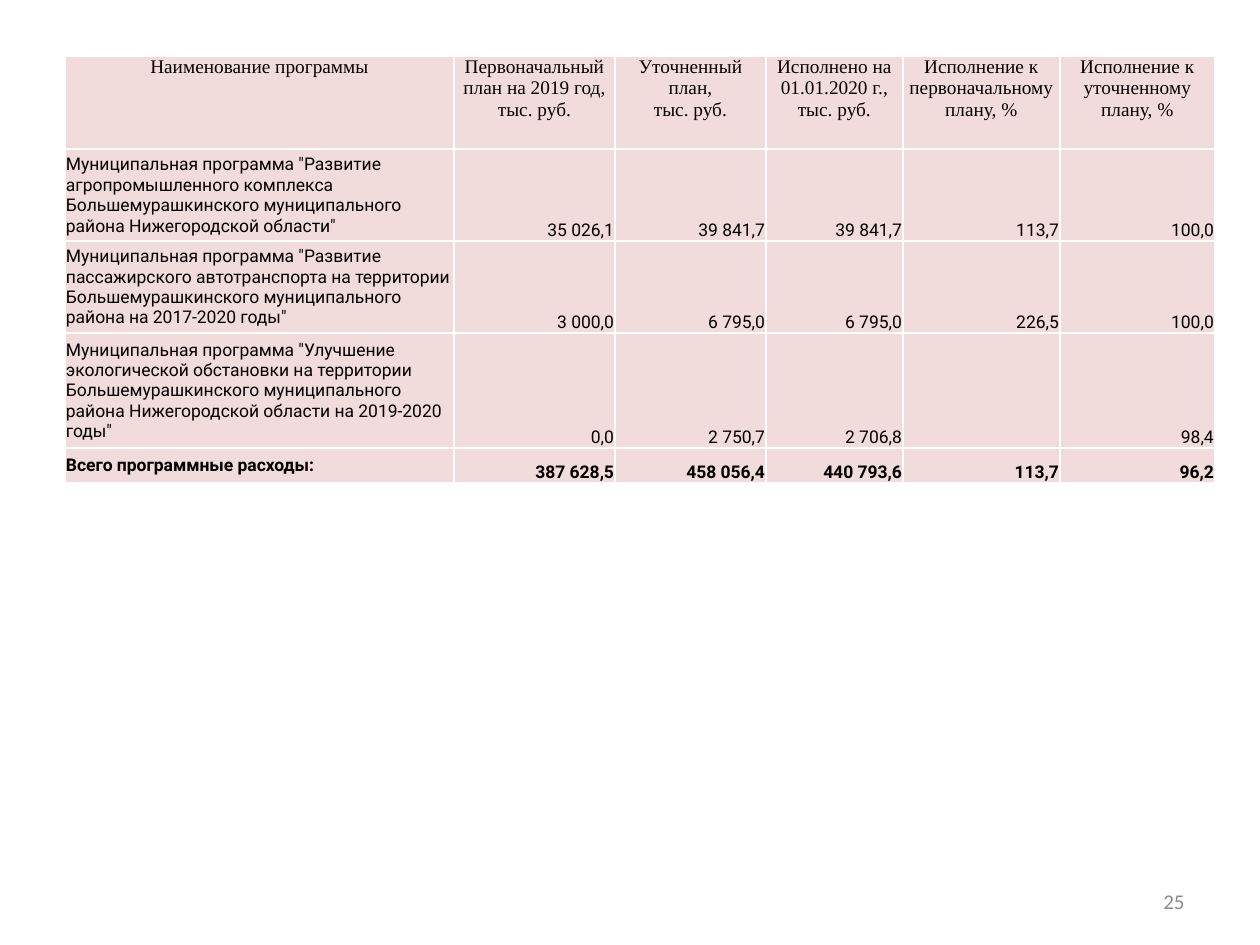
from lxml.etree import SubElement
from pptx import Presentation
from pptx.dml.color import RGBColor
from pptx.enum.text import MSO_ANCHOR as ANCHOR, PP_ALIGN as ALIGN
from pptx.oxml.ns import qn
from pptx.util import Emu, Pt

EMU_PER_PX = 914400 / 126
COLUMN_WIDTHS = [389, 161, 151, 137, 157, 155]
ROW_HEIGHTS = [93, 92, 92, 115, 35]

HEADERS = [
    "Наименование программы",
    "Первоначальный план на 2019 год, тыс. руб.",
    "Уточненный план,\nтыс. руб.",
    "Исполнено на 01.01.2020 г., тыс. руб.",
    "Исполнение к первоначальному плану, %",
    "Исполнение к уточненному плану, %",
]
PROGRAMS = [
    ['Муниципальная программа "Развитие агропромышленного комплекса '
     'Большемурашкинского муниципального района Нижегородской области"',
     "35 026,1", "39 841,7", "39 841,7", "113,7", "100,0"],
    ['Муниципальная программа "Развитие пассажирского автотранспорта на территории '
     'Большемурашкинского муниципального района на 2017-2020 годы"',
     "3 000,0", "6 795,0", "6 795,0", "226,5", "100,0"],
    ['Муниципальная программа "Улучшение экологической обстановки на территории '
     'Большемурашкинского муниципального района Нижегородской области на 2019-2020 годы"',
     "0,0", "2 750,7", "2 706,8", "", "98,4"],
]
TOTAL = ["Всего программные расходы:",
         "387 628,5", "458 056,4", "440 793,6", "113,7", "96,2"]


def px(n):
    return Emu(round(n * EMU_PER_PX))


def rgb(color):
    return RGBColor.from_string(color)


def write(tf, text, align, font, size, color="000000", bold=False):
    for i, line in enumerate(text.split("\n")):
        p = tf.paragraphs[0] if i == 0 else tf.add_paragraph()
        p.alignment = align
        p.font.size = Pt(size)
        if not line:
            continue
        r = p.add_run()
        r.text = line
        r.font.name = font
        r.font.size = Pt(size)
        r.font.bold = bold
        r.font.color.rgb = rgb(color)


def style_cell(cell, anchor, inset):
    cell.fill.solid()
    cell.fill.fore_color.rgb = rgb("F2DCDB")
    cell.vertical_anchor = anchor
    cell.margin_left = cell.margin_right = cell.margin_top = px(inset)
    cell.margin_bottom = 0
    tc_pr = cell._tc.get_or_add_tcPr()
    for i, side in enumerate(("lnL", "lnR", "lnT", "lnB")):
        line = SubElement(tc_pr, qn(f"a:{side}"), w=str(Pt(1)))
        fill = SubElement(line, qn("a:solidFill"))
        SubElement(fill, qn("a:srgbClr"), val="FFFFFF")
        tc_pr.insert(i, line)  # borders must precede the cell fill


def add_budget_table(slide, left, top):
    rows = [HEADERS, *PROGRAMS, TOTAL]
    table = slide.shapes.add_table(
        len(rows), len(HEADERS), px(left), px(top),
        px(sum(COLUMN_WIDTHS)), px(sum(ROW_HEIGHTS))).table
    for column, width in zip(table.columns, COLUMN_WIDTHS):
        column.width = px(width)
    for row, height in zip(table.rows, ROW_HEIGHTS):
        row.height = px(height)
    for i, row in enumerate(rows):
        for j, text in enumerate(row):
            cell = table.cell(i, j)
            if i == 0:
                style_cell(cell, ANCHOR.TOP, 0)
                write(cell.text_frame, text, ALIGN.CENTER, "Times New Roman", 11)
            else:
                style_cell(cell, ANCHOR.BOTTOM if j else ANCHOR.MIDDLE, 1)
                write(cell.text_frame, text, ALIGN.RIGHT if j else ALIGN.LEFT,
                      "Roboto", 10, bold=row is TOTAL)


def add_page_number(slide, left, top, width, height):
    tf = slide.shapes.add_textbox(px(left), px(top), px(width), px(height)).text_frame
    tf.word_wrap = True
    tf.vertical_anchor = ANCHOR.MIDDLE
    write(tf, "25", ALIGN.RIGHT, "Calibri", 12, "8C8C8C")


def main():
    prs = Presentation()
    prs.slide_width, prs.slide_height = px(1260), px(945)
    slide = prs.slides.add_slide(prs.slide_layouts[6])
    add_budget_table(slide, 65, 56)
    add_page_number(slide, 903, 876, 294, 50)
    prs.save("out.pptx")


if __name__ == "__main__":
    main()
